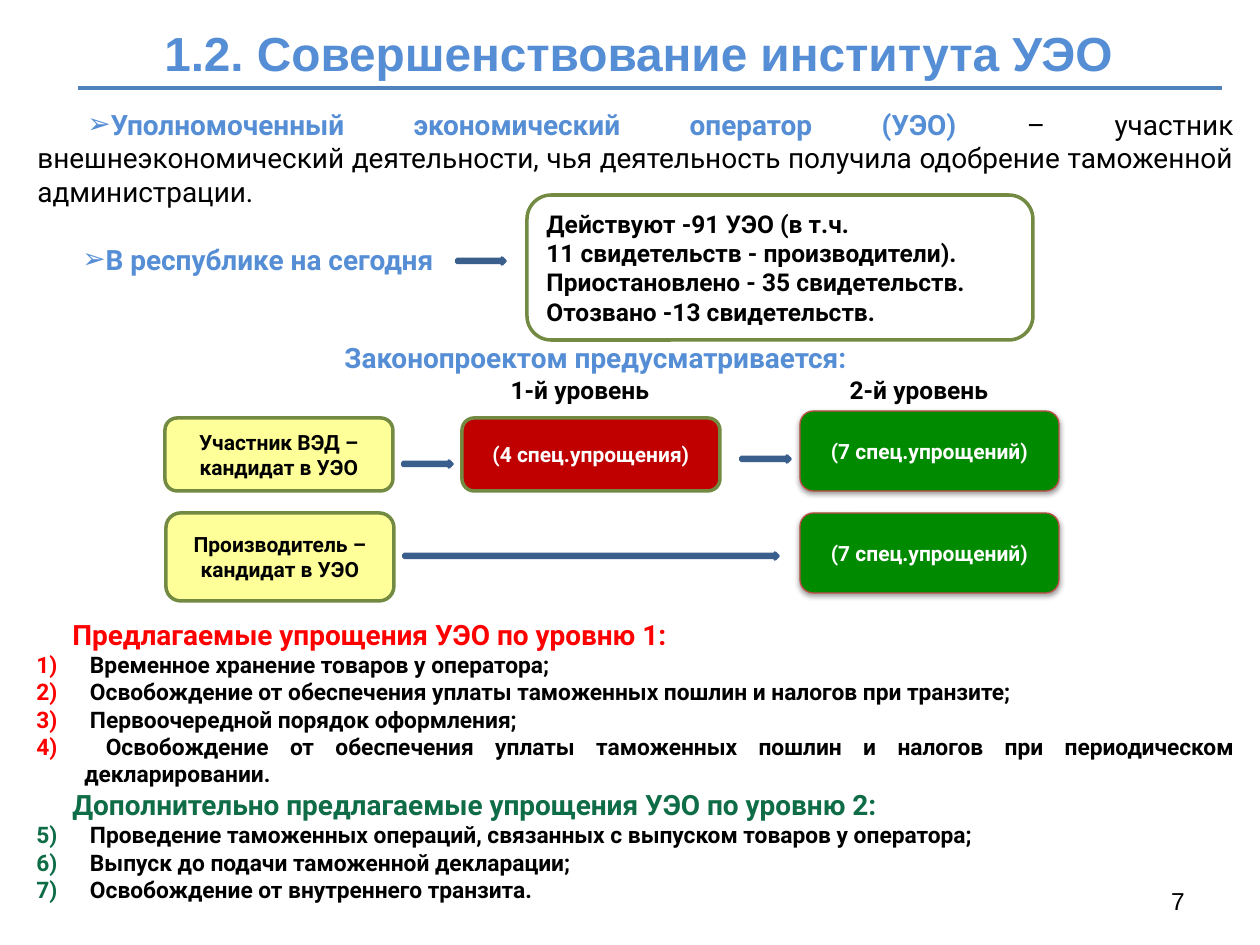
"""Build the slide on improving the institute of the authorised economic operator."""
import lxml.etree
import pptx
import pptx.dml.color
import pptx.enum.shapes
import pptx.enum.text
import pptx.oxml.ns
import pptx.util

PX = 914400 / 126
BLUE, OLIVE, BLACK, WHITE = "558ED5", "738A42", "000000", "FFFFFF"
RED, GREEN, YELLOW = "FF0000", "0E6C46", "FFFF99"
ALIGN = pptx.enum.text.PP_ALIGN
ANCHOR = pptx.enum.text.MSO_ANCHOR
SHAPE = pptx.enum.shapes.MSO_SHAPE
ARROW_HEIGHT = 6

TITLE = "1.2. Совершенствование института УЭО"
TERM = "Уполномоченный экономический оператор (УЭО) "
MEANING = ("– участник внешнеэкономический деятельности, чья деятельность "
           "получила одобрение таможенной администрации.")
TODAY = "В республике на сегодня"
STATUS = [
    "Действуют -91 УЭО (в т.ч.",
    "11 свидетельств - производители).",
    "Приостановлено - 35 свидетельств.",
    "Отозвано -13 свидетельств.",
]
CAPTIONS = [
    ("Законопроектом предусматривается:", (169, 334, 853, 47), 16, BLUE),
    ("1-й уровень", (479, 369, 202, 43), 14, BLACK),
    ("2-й уровень", (806, 369, 226, 43), 14, BLACK),
]
STEPS = [
    ("Участник ВЭД – кандидат в УЭО", (165, 418, 228, 73), YELLOW, BLACK),
    ("(4 спец.упрощения)", (462, 418, 258, 73), "C00000", WHITE),
    ("Производитель – кандидат в УЭО", (166, 513, 228, 88), YELLOW, BLACK),
]
FINAL_STEP = "(7 спец.упрощений)"
FINAL_STEP_TOPS = [411, 513]
ARROWS = [(457, 258, 48), (403, 461, 49), (741, 456, 49), (404, 553, 374)]
SIMPLIFICATIONS = [
    ("Предлагаемые упрощения УЭО по уровню 1:", RED, [
        "Временное хранение товаров у оператора;",
        "Освобождение от обеспечения уплаты таможенных пошлин и налогов при транзите;",
        "Первоочередной порядок оформления;",
        "Освобождение от обеспечения уплаты таможенных пошлин и налогов "
        "при периодическом декларировании.",
    ]),
    ("Дополнительно предлагаемые упрощения УЭО по уровню 2:", GREEN, [
        "Проведение таможенных операций, связанных с выпуском товаров у оператора;",
        "Выпуск до подачи таможенной декларации;",
        "Освобождение от внутреннего транзита.",
    ]),
]


def px(*lengths):
    return [pptx.util.Emu(round(length * PX)) for length in lengths]


def rgb(value):
    return pptx.dml.color.RGBColor.from_string(value)


def add_xml(parent, tag, **attributes):
    return lxml.etree.SubElement(parent, pptx.oxml.ns.qn(tag), attributes)


def set_font(font, size, color, bold=True, name="Roboto"):
    font.name, font.size, font.bold = name, pptx.util.Pt(size), bold
    font.color.rgb = rgb(color)


def write(paragraph, text, size, color, align, **font):
    paragraph.text, paragraph.alignment = text, align
    set_font(paragraph.font, size, color, **font)


def indent(paragraph, first, left=0):
    properties = paragraph._p.get_or_add_pPr()
    properties.set("marL", str(px(left)[0]))
    properties.set("indent", str(px(first)[0]))
    return properties


def add_bullet(paragraph, color, first, left, typeface, tag, **mark):
    properties = indent(paragraph, first, left)
    add_xml(add_xml(properties, "a:buClr"), "a:srgbClr", val=color)
    add_xml(properties, "a:buFont", typeface=typeface)
    add_xml(properties, tag, **mark)


def add_arrow_bullet(paragraph):
    add_bullet(paragraph, BLUE, 50, 0, "Arial", "a:buChar", char="➢")


def add_number(paragraph, color, start):
    add_bullet(paragraph, color, -48, 48, "Roboto", "a:buAutoNum",
               type="arabicParenR", startAt=str(start))


def add_text(slide, box, anchor=ANCHOR.TOP):
    frame = slide.shapes.add_textbox(*px(*box)).text_frame
    frame.word_wrap, frame.vertical_anchor = True, anchor
    return frame


def add_shape(slide, kind, box, fill, line, width):
    shape = slide.shapes.add_shape(kind, *px(*box))
    shape.shadow.inherit = False
    if fill:
        shape.fill.solid()
        shape.fill.fore_color.rgb = rgb(fill)
    else:
        shape.fill.background()
    shape.line.color.rgb, shape.line.width = rgb(line), pptx.util.Pt(width)
    return shape


def add_step(slide, text, box, fill, color, line=OLIVE, width=2):
    step = add_shape(slide, SHAPE.ROUNDED_RECTANGLE, box, fill, line, width)
    write(step.text_frame.paragraphs[0], text, 12, color, ALIGN.CENTER)
    return step


def add_shadow(shape):
    effects = shape._element.spPr.find(pptx.oxml.ns.qn("a:effectLst"))
    shadow = add_xml(effects, "a:outerShdw", blurRad=str(pptx.util.Pt(3.1)),
                     dist=str(pptx.util.Pt(1.6)), dir="5400000", rotWithShape="0")
    add_xml(add_xml(shadow, "a:srgbClr", val=BLACK), "a:alpha", val="38000")


def add_heading(slide):
    title = slide.shapes.title
    title.left, title.top, title.width, title.height = px(37, -9, 1203, 122)
    title.text_frame.vertical_anchor = ANCHOR.MIDDLE
    write(title.text_frame.paragraphs[0], TITLE, 27.3, BLUE, ALIGN.CENTER, name="Arial")
    rule = slide.shapes.add_connector(
        pptx.enum.shapes.MSO_CONNECTOR.STRAIGHT, *px(78, 88, 1222, 88))
    rule.line.color.rgb, rule.line.width = rgb("4F81BD"), pptx.util.Pt(2.25)
    add_xml(rule._element.spPr, "a:effectLst")


def add_definition(slide):
    definition = add_text(slide, (25, 101, 1221, 149)).paragraphs[0]
    definition.alignment = ALIGN.JUSTIFY
    add_arrow_bullet(definition)
    for text, color, bold in [(TERM, BLUE, True), (MEANING, BLACK, False)]:
        run = definition.add_run()
        run.text = text
        set_font(run.font, 16, color, bold)


def add_status(slide):
    today = add_text(slide, (20, 236, 442, 47)).paragraphs[0]
    add_arrow_bullet(today)
    write(today, TODAY, 16, BLUE, ALIGN.JUSTIFY)
    status = add_shape(slide, SHAPE.ROUNDED_RECTANGLE, (527, 195, 506, 145), None, OLIVE, 2)
    frame = status.text_frame
    for number, text in enumerate(STATUS):
        paragraph = frame.add_paragraph() if number else frame.paragraphs[0]
        write(paragraph, text, 14, BLACK, ALIGN.JUSTIFY)


def add_flow(slide):
    for text, box, size, color in CAPTIONS:
        write(add_text(slide, box).paragraphs[0], text, size, color, ALIGN.CENTER)
    for step in STEPS:
        add_step(slide, *step)
    for top in FINAL_STEP_TOPS:
        add_shadow(add_step(slide, FINAL_STEP, (800, top, 259, 80), "008A00", WHITE,
                            "BF4C48", 0.75))
    for left, top, width in ARROWS:
        add_shape(slide, SHAPE.RIGHT_ARROW, (left, top, width, ARROW_HEIGHT),
                  "4F81BD", "3A5F8C", 2)


def add_simplifications(slide):
    frame = add_text(slide, (24, 611, 1221, 301))
    start = 1
    for text, color, items in SIMPLIFICATIONS:
        heading = frame.add_paragraph() if start > 1 else frame.paragraphs[0]
        indent(heading, 36)
        write(heading, text, 16, color, ALIGN.JUSTIFY)
        for item in items:
            paragraph = frame.add_paragraph()
            add_number(paragraph, color, start)
            write(paragraph, " " + item, 13, BLACK, ALIGN.JUSTIFY)
        start += len(items)


def main():
    deck = pptx.Presentation()
    deck.slide_width, deck.slide_height = px(1260, 945)
    slide = deck.slides.add_slide(deck.slide_layouts[5])
    add_heading(slide)
    add_definition(slide)
    add_status(slide)
    add_flow(slide)
    add_simplifications(slide)
    page = add_text(slide, (903, 876, 294, 50), ANCHOR.MIDDLE).paragraphs[0]
    write(page, "7", 14, BLACK, ALIGN.RIGHT, bold=False, name="Arial")
    deck.save("out.pptx")


if __name__ == "__main__":
    main()
